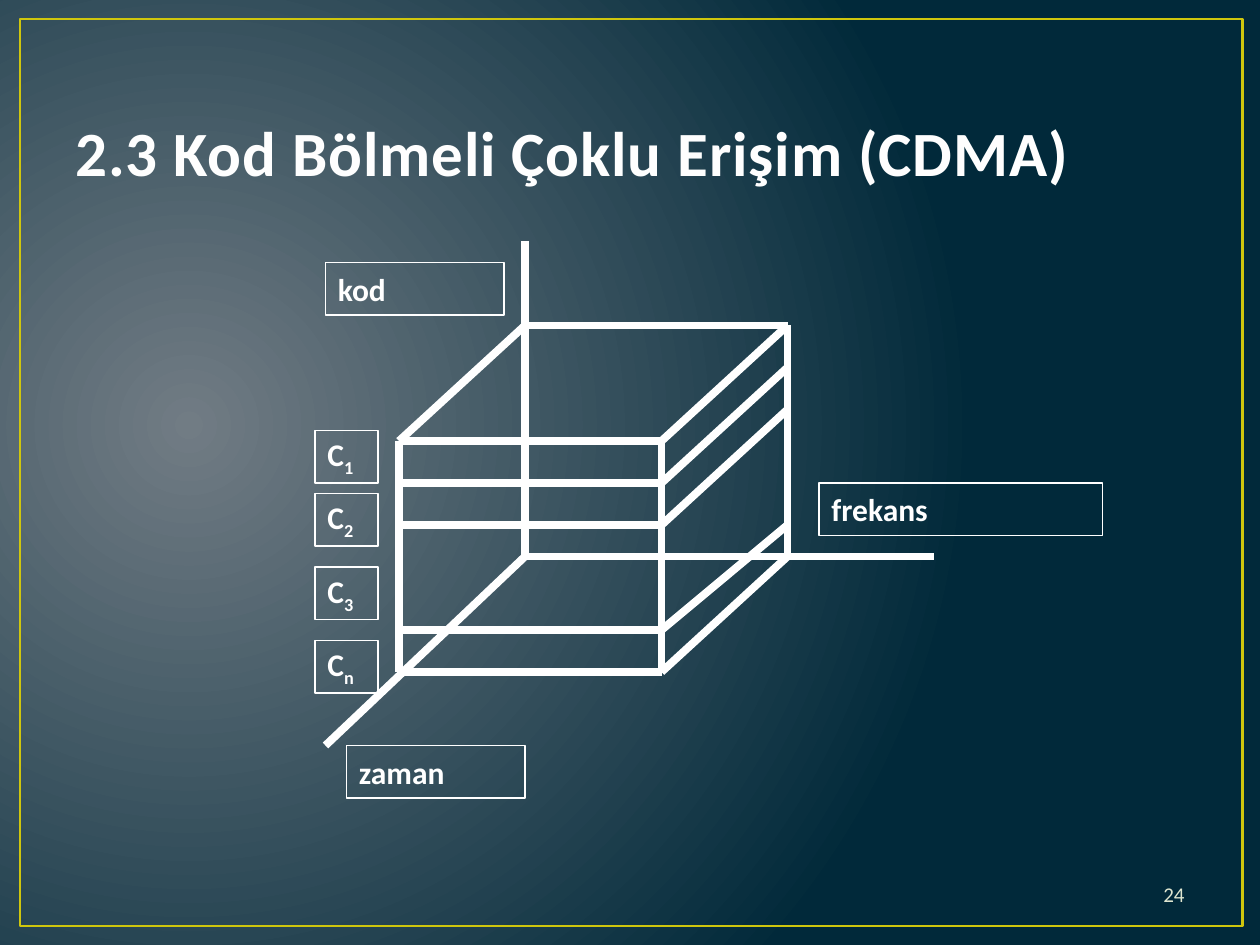
from dataclasses import dataclass

import lxml.etree
import pptx
import pptx.dml.color
import pptx.enum.shapes
import pptx.enum.text
import pptx.oxml.ns
import pptx.util

Pt = pptx.util.Pt
RGBColor = pptx.dml.color.RGBColor
Align = pptx.enum.text.PP_ALIGN
Anchor = pptx.enum.text.MSO_ANCHOR
qn = pptx.oxml.ns.qn

WHITE = RGBColor(0xFF, 0xFF, 0xFF)
TITLE_WHITE = RGBColor(0xFE, 0xFE, 0xFE)
PALE_GREEN = RGBColor(0xDF, 0xE6, 0xD0)
FRAME_YELLOW = RGBColor(0xCF, 0xC6, 0x0D)
GLOW_GREY = RGBColor(0x71, 0x7C, 0x84)
DEEP_BLUE = RGBColor(0x01, 0x29, 0x3A)
FONT = "Calibri"

FRONT_LEFT, FRONT_RIGHT, FRONT_TOP, FRONT_BOTTOM = 228, 378, 252, 384
BACK_LEFT, BACK_RIGHT, BACK_TOP, BACK_BOTTOM = 300, 450, 186, 318
LABEL_HEIGHT = 30


@dataclass(frozen=True)
class Segment:
    x1: float
    y1: float
    x2: float
    y2: float


@dataclass(frozen=True)
class Label:
    text: str
    left: float
    top: float
    width: float
    subscript: str = ""


@dataclass(frozen=True)
class CodeLevel:
    front: float
    back: float


EDGES = [
    Segment(BACK_LEFT, BACK_TOP, BACK_RIGHT, BACK_TOP),
    Segment(BACK_RIGHT, BACK_TOP, BACK_RIGHT, BACK_BOTTOM),
    Segment(FRONT_RIGHT, FRONT_TOP, FRONT_RIGHT, FRONT_BOTTOM),
    Segment(FRONT_LEFT, FRONT_TOP, FRONT_LEFT, FRONT_BOTTOM),
    Segment(BACK_LEFT, BACK_TOP, FRONT_LEFT, FRONT_TOP),
]
AXES = [
    Segment(BACK_LEFT, 138, BACK_LEFT, BACK_BOTTOM),
    Segment(BACK_LEFT, BACK_BOTTOM, 534, BACK_BOTTOM),
    Segment(BACK_LEFT, BACK_BOTTOM, 186, 426),
]
LEVELS = [
    CodeLevel(FRONT_TOP, BACK_TOP),
    CodeLevel(276, 210),
    CodeLevel(300, 234),
    CodeLevel(360, 300),
    CodeLevel(FRONT_BOTTOM, BACK_BOTTOM),
]
AXIS_LABELS = [
    Label("kod", 186, 150, 102),
    Label("zaman", 198, 426, 102),
    Label("frekans", 468, 276, 162),
]
CODE_LABELS = [
    Label("C", 180, top, 36, index)
    for index, top in zip("123n", (246, 282, 324, 366))
]


def paint_background(page) -> None:
    fill = page.background.fill
    fill.gradient()
    for stop, color in zip(fill.gradient_stops, (GLOW_GREY, DEEP_BLUE)):
        stop.color.rgb = color
    for stop, position in zip(fill.gradient_stops, (0, 1)):
        stop.position = position
    gradient = next(page.element.iter(qn("a:gradFill")))
    gradient.remove(gradient.find(qn("a:lin")))
    circle = lxml.etree.SubElement(gradient, qn("a:path"))
    circle.set("path", "circle")
    focus = lxml.etree.SubElement(circle, qn("a:fillToRect"))
    for side, percent in zip("ltrb", (15, 50, 85, 60)):
        focus.set(side, str(percent * 1000))


def add_span(para, text: str, size: float, color: RGBColor, bold: bool = True):
    span = para.add_run()
    span.text = text
    span.font.name = FONT
    span.font.size = Pt(size)
    span.font.bold = bold
    span.font.color.rgb = color
    return span.font


def add_outline(page, left: float, top: float, width: float, height: float,
                color: RGBColor, weight: float):
    box = page.shapes.add_shape(
        pptx.enum.shapes.MSO_SHAPE.RECTANGLE,
        Pt(left), Pt(top), Pt(width), Pt(height))
    box.shadow.inherit = False
    box.fill.background()
    box.line.color.rgb = color
    box.line.width = Pt(weight)
    return box


def add_text_box(page, left: float, top: float, width: float, height: float,
                 anchor: Anchor, align: Align):
    box = page.shapes.add_textbox(Pt(left), Pt(top), Pt(width), Pt(height))
    box.text_frame.word_wrap = True
    box.text_frame.vertical_anchor = anchor
    para = box.text_frame.paragraphs[0]
    para.alignment = align
    return para


def draw_segment(page, segment: Segment) -> None:
    line = page.shapes.add_connector(
        pptx.enum.shapes.MSO_CONNECTOR.STRAIGHT,
        Pt(segment.x1), Pt(segment.y1), Pt(segment.x2), Pt(segment.y2))
    line.line.color.rgb = WHITE
    line.line.width = Pt(4.5)
    properties = line.element.find(qn("p:spPr"))
    lxml.etree.SubElement(properties, qn("a:effectLst"))


def draw_level(page, level: CodeLevel) -> None:
    draw_segment(page, Segment(FRONT_LEFT, level.front, FRONT_RIGHT, level.front))
    draw_segment(page, Segment(FRONT_RIGHT, level.front, BACK_RIGHT, level.back))


def draw_label(page, label: Label) -> None:
    box = add_outline(page, label.left, label.top, label.width, LABEL_HEIGHT,
                      WHITE, 0.75)
    box.text_frame.word_wrap = False
    box.text_frame.vertical_anchor = Anchor.MIDDLE
    para = box.text_frame.paragraphs[0]
    para.alignment = Align.LEFT
    add_span(para, label.text, 18, WHITE)
    if label.subscript:
        font = add_span(para, label.subscript, 18, WHITE)
        font._element.set("baseline", "-25000")


def main() -> None:
    deck = pptx.Presentation()
    deck.slide_width, deck.slide_height = Pt(720), Pt(540)
    page = deck.slides.add_slide(deck.slide_layouts[6])
    paint_background(page)
    add_outline(page, 11.5, 10.8, 698.4, 518.4, FRAME_YELLOW, 1.5)

    title = add_text_box(page, 36, 21.6, 648, 90, Anchor.BOTTOM, Align.LEFT)
    font = add_span(title, "2.3 Kod Bölmeli Çoklu Erişim (CDMA)", 36, TITLE_WHITE)
    font._element.set("spc", "50")

    for segment in EDGES + AXES:
        draw_segment(page, segment)
    for level in LEVELS:
        draw_level(page, level)
    for label in AXIS_LABELS + CODE_LABELS:
        draw_label(page, label)

    number = add_text_box(page, 516, 496.8, 168, 28.8, Anchor.MIDDLE, Align.RIGHT)
    add_span(number, "24", 12, PALE_GREEN, bold=False)
    deck.save("out.pptx")


if __name__ == "__main__":
    main()
